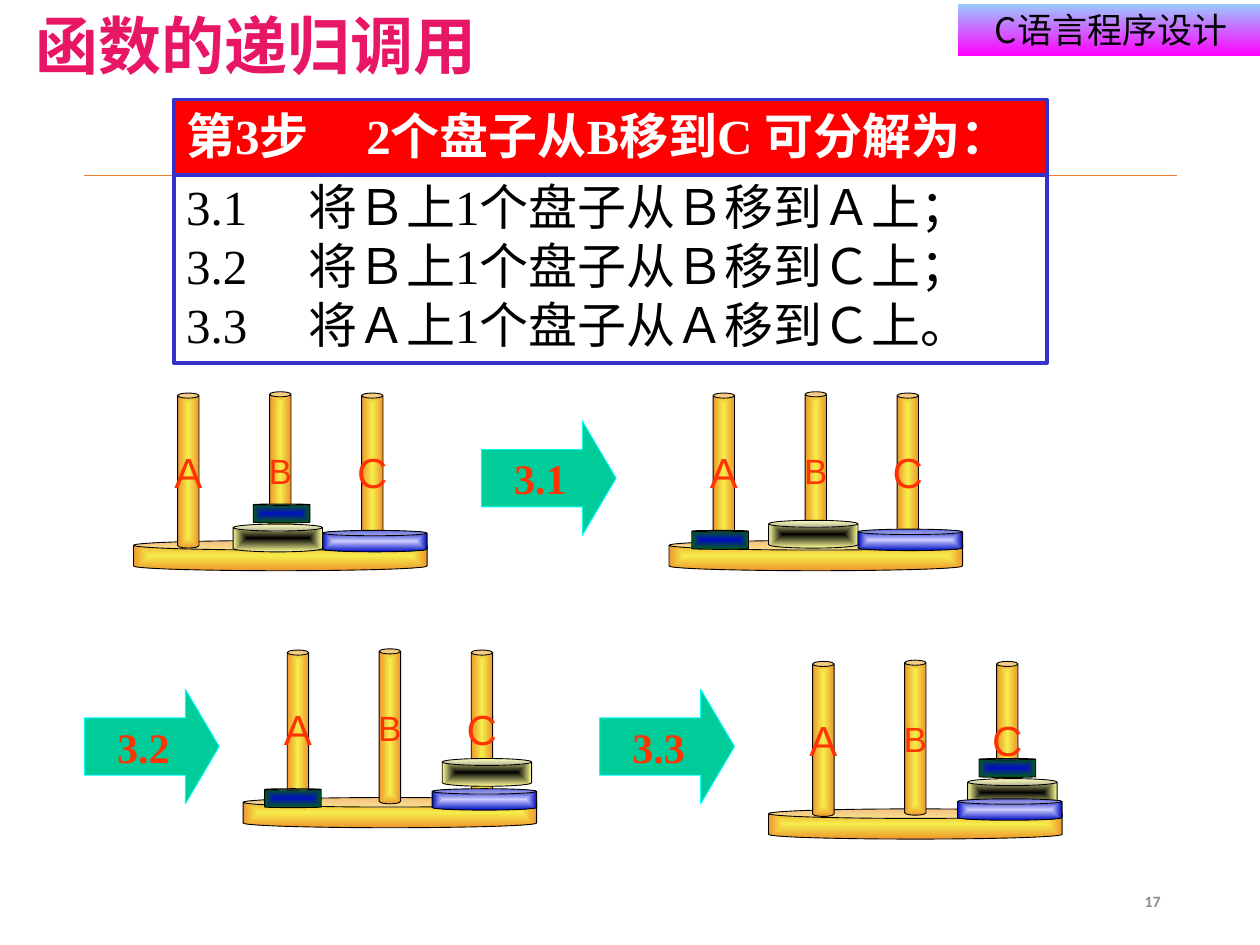
"""Build the slide on moving two Hanoi disks from B to C."""
from lxml import etree
from pptx import Presentation, util as u
from pptx.dml.color import RGBColor
from pptx.enum import shapes, text
from pptx.oxml import ns

Inches, Pt = u.Inches, u.Pt
KIND = shapes.MSO_SHAPE
MID, TOP = text.MSO_ANCHOR.MIDDLE, text.MSO_ANCHOR.TOP
LEFT, MIDST, RIGHT = text.PP_ALIGN.LEFT, text.PP_ALIGN.CENTER, text.PP_ALIGN.RIGHT
HAN, SERIF = "Noto Sans CJK SC", "Times New Roman"

BLACK = RGBColor(0x00, 0x00, 0x00)
WHITE = RGBColor(0xFF, 0xFF, 0xFF)
GREY = RGBColor(0x8C, 0x8C, 0x8C)
PINK = RGBColor(0xE8, 0x17, 0x66)
RED = RGBColor(0xFF, 0x00, 0x00)
CORAL = RGBColor(0xFF, 0x33, 0x00)
RUST = RGBColor(0xED, 0x7D, 0x31)
INDIGO = RGBColor(0x33, 0x33, 0xCC)
GREEN = RGBColor(0x00, 0xCC, 0x99)
CYAN = RGBColor(0x00, 0xFF, 0xFF)
SKY = RGBColor(0x99, 0xCC, 0xFF)
PURPLE = RGBColor(0xFF, 0x00, 0xFF)
GOLD = (RGBColor(0xF5, 0xED, 0x4B), RGBColor(0xEE, 0x96, 0x2C))
NAVY = RGBColor(0x00, 0x0E, 0xC2)

# width, height, adjustment, gradient
DISKS = (
    (0.45, 0.15, 0.073, (NAVY, RGBColor(0x06, 0x60, 0x15))),
    (0.71, 0.22, 0.25, (BLACK, RGBColor(0xFF, 0xFF, 0x99))),
    (0.83, 0.17, 0.25, (RGBColor(0xCC, 0xCC, 0xFF), NAVY)),
)
# left and top of a tower, then of its small, middle and large disk
TOWERS = (
    ((1.06, 3.11), (2.01, 4.0), (1.85, 4.16), (2.56, 4.21)),
    ((5.31, 3.11), (5.49, 4.21), (6.1, 4.13), (6.81, 4.2)),
    ((1.93, 5.15), (2.1, 6.26), (3.51, 6.02), (3.43, 6.26)),
    ((6.1, 5.24), (7.77, 6.02), (7.68, 6.18), (7.6, 6.34)),
)
POLES = (("A", 0.35, 0.01, 24), ("B", 1.08, 0, 20), ("C", 1.81, 0.01, 24))
ARROWS = (("3.1", 3.82, 3.34), ("3.2", 0.67, 5.47), ("3.3", 4.76, 5.47))
STEPS = (
    "3.1\t将Ｂ上1个盘子从Ｂ移到Ａ上；",
    "3.2\t将Ｂ上1个盘子从Ｂ移到Ｃ上；",
    "3.3\t将Ａ上1个盘子从Ａ移到Ｃ上。",
)


def write(shape, *lines, size, color, font=HAN, han=HAN, bold=False, align=MIDST,
          anchor=MID, wrap=True, pitch=None, tab=None):
    """Put formatted paragraphs into a shape."""
    frame = shape.text_frame
    frame.auto_size = text.MSO_AUTO_SIZE.NONE
    frame.word_wrap, frame.vertical_anchor = wrap, anchor
    for i, line in enumerate(lines):
        para = frame.add_paragraph() if i else frame.paragraphs[0]
        para.alignment = align
        if pitch:
            para.line_spacing = Pt(pitch)
        if tab:
            tabs = etree.SubElement(para._p.get_or_add_pPr(), ns.qn("a:tabLst"))
            etree.SubElement(tabs, ns.qn("a:tab"), pos=str(Inches(tab)), algn="l")
        run = para.add_run()
        run.text = line
        run.font.size, run.font.bold, run.font.name = Pt(size), bold, font
        run.font.color.rgb = color
        east = etree.SubElement(run._r.get_or_add_rPr(), ns.qn("a:ea"))
        east.set("typeface", han)


def blend(shape, start, end, angle=None):
    """Fill with a linear gradient, or one from the centre without an angle."""
    shape.fill.gradient()
    for stop, color in zip(shape.fill.gradient_stops, (start, end)):
        stop.color.rgb = color
    if angle is not None:
        shape.fill.gradient_angle = angle
        return
    grad = shape._element.spPr.find(ns.qn("a:gradFill"))
    grad.remove(grad.find(ns.qn("a:lin")))
    way = etree.SubElement(grad, ns.qn("a:path"), path="rect")
    etree.SubElement(way, ns.qn("a:fillToRect"), l="50000", t="50000", r="50000", b="50000")


def draw(parent, kind, x, y, w, h, fill=None, line=None, width=0.5, adjust=()):
    """Add a preset shape with a plain fill and outline."""
    shape = parent.add_shape(kind, Inches(x), Inches(y), Inches(w), Inches(h))
    shape.shadow.inherit = False
    for i, value in enumerate(adjust):
        shape.adjustments[i] = value
    if fill is None:
        shape.fill.background()
    else:
        shape.fill.solid()
        shape.fill.fore_color.rgb = fill
    if line is None:
        shape.line.fill.background()
    else:
        shape.line.color.rgb = line
        shape.line.width = Pt(width)
    return shape


def can(parent, x, y, w, h, adjust, colors):
    """Add a shaded cylinder."""
    shape = draw(parent, KIND.CAN, x, y, w, h, line=BLACK, adjust=[adjust])
    blend(shape, *colors)
    return shape


def tower(tree, x, y):
    """Add a base with its three labelled poles."""
    group = tree.add_group_shape().shapes
    can(group, x, y + 1.18, 2.33, 0.24, 0.315, GOLD)
    for name, dx, dy, size in POLES:
        pole = can(group, x + dx, y + dy, 0.17, 1.23, 0.234, GOLD)
        write(pole, name, size=size, color=CORAL, font="Arial", wrap=False)


def head(slide):
    """Add the title, course tag, rule and page number."""
    tree = slide.shapes
    tag = draw(tree, KIND.RECTANGLE, 7.6, 0.03, 2.44, 0.41)
    blend(tag, SKY, PURPLE, 270)
    write(tag, "C语言程序设计", size=20, color=BLACK)
    title = tree.title
    title.left, title.top, title.width, title.height = map(Inches, (0.1, 0, 3.86, 0.41))
    write(title, "函数的递归调用", size=36, color=PINK, bold=True, anchor=TOP, wrap=False,
          font="Noto Sans CJK JP", han="Noto Sans CJK JP")
    rule = tree.add_connector(shapes.MSO_CONNECTOR.STRAIGHT, Inches(0.67), Inches(1.39),
                              Inches(9.34), Inches(1.39))
    rule.line.color.rgb, rule.line.width = RUST, Pt(0.25)
    etree.SubElement(rule._element.spPr, ns.qn("a:effectLst"))
    page = tree.add_textbox(Inches(7.06), Inches(6.95), Inches(2.25), Inches(0.4))
    write(page, "17", size=9, color=GREY, font="Calibri", bold=True, align=RIGHT)


def main():
    """Build and save the slide."""
    deck = Presentation()
    deck.slide_width, deck.slide_height = Inches(10), Inches(7.5)
    slide = deck.slides.add_slide(deck.slide_layouts[5])
    tree = slide.shapes
    head(slide)
    block = dict(size=28, font=SERIF, align=LEFT, anchor=TOP, pitch=33.7)
    steps = draw(tree, KIND.RECTANGLE, 1.38, 1.35, 6.93, 1.53, line=INDIGO, width=2.25)
    write(steps, *STEPS, color=BLACK, tab=0.97, **block)
    for spot, *_ in TOWERS:
        tower(tree, *spot)
    for name, x, y in ARROWS:
        arrow = draw(tree, KIND.RIGHT_ARROW, x, y, 1.07, 0.91, GREEN, CYAN, adjust=(0.5, 0.295))
        write(arrow, name, size=24, color=CORAL, font=SERIF, bold=True)
    bar = draw(tree, KIND.RECTANGLE, 1.38, 0.79, 6.93, 0.6, RED, INDIGO, 2.25)
    write(bar, "第3步\t2个盘子从B移到C 可分解为：", color=WHITE, bold=True, tab=1.43, **block)
    for _, *spots in TOWERS:
        for spot, disk in zip(spots, DISKS):
            can(tree, *spot, *disk)
    deck.save("out.pptx")


if __name__ == "__main__":
    main()
